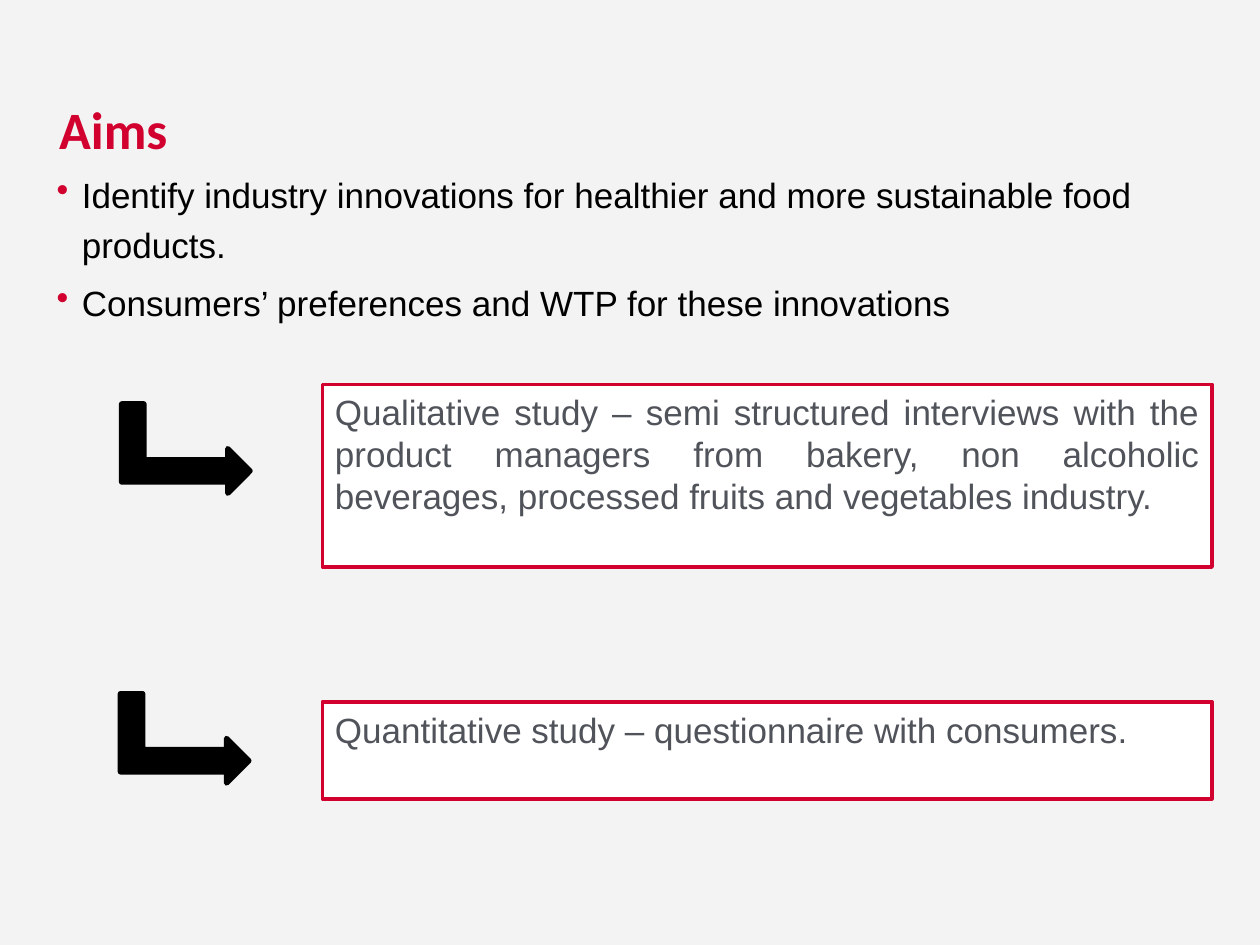
from lxml import etree
from pptx import Presentation, util as u
from pptx.dml.color import RGBColor
from pptx.enum import shapes, text
from pptx.oxml.ns import qn

HUES = {"back": "F3F3F3", "red": "D2002E", "ink": "000000",
        "grey": "50535A", "white": "FFFFFF"}
AIMS = ["Identify industry innovations for healthier and more sustainable "
        "food products.",
        "Consumers’ preferences and WTP for these innovations"]
# Arrow left and top, box top and height, wording
STUDIES = [
    (1.12, 3.05, 3.05, 1.45,
     "Qualitative study – semi structured interviews with the product "
     "managers from bakery, non alcoholic beverages, processed fruits and "
     "vegetables industry."),
    (1.11, 5.35, 5.57, 0.77,
     "Quantitative study – questionnaire with consumers."),
]


def tint(name):
    return RGBColor.from_string(HUES[name])


def add_bullet(para, hue):
    props = para._p.get_or_add_pPr()
    props.set("marL", str(u.Inches(0.2)))
    props.set("indent", str(u.Inches(-0.2)))
    color = etree.SubElement(props, qn("a:buClr"))
    etree.SubElement(color, qn("a:srgbClr")).set("val", HUES[hue])
    etree.SubElement(props, qn("a:buChar")).set("char", "•")


def write(frame, lines, size=20, font="Arial", hue="ink", bold=False,
          align=text.PP_ALIGN.LEFT, anchor=text.MSO_ANCHOR.TOP,
          pads=(0.1, 0.05), space=None, gap=0, bullet=None):
    """Fill a frame, one paragraph a line; pads are side and top insets."""
    frame.word_wrap = True
    frame.vertical_anchor = anchor
    frame.margin_left = frame.margin_right = u.Inches(pads[0])
    frame.margin_top = frame.margin_bottom = u.Inches(pads[1])
    for i, line in enumerate(lines):
        para = frame.add_paragraph() if i else frame.paragraphs[0]
        para.alignment = align
        if space:
            para.line_spacing = space
        if i and gap:
            para.space_before = u.Pt(gap)
        if bullet:
            add_bullet(para, bullet)
        run = para.add_run()
        run.text = line
        run.font.name, run.font.size = font, u.Pt(size)
        run.font.bold = bold
        run.font.color.rgb = tint(hue)


class Deck:
    def __init__(self):
        self.show = Presentation()
        self.show.slide_width = u.Inches(10)
        self.show.slide_height = u.Inches(7.5)
        self.slide = self.show.slides.add_slide(self.show.slide_layouts[6])
        fill = self.slide.background.fill
        fill.solid()
        fill.fore_color.rgb = tint("back")

    def label(self, spot, lines, **style):
        box = self.slide.shapes.add_textbox(*map(u.Inches, spot))
        write(box.text_frame, lines, **style)

    def shape(self, kind, spot, fill, line, width):
        item = self.slide.shapes.add_shape(kind, *map(u.Inches, spot))
        item.shadow.inherit = False
        item.fill.solid()
        item.fill.fore_color.rgb = tint(fill)
        item.line.color.rgb = tint(line)
        item.line.width = u.Pt(width)
        return item

    def arrow(self, left, top):
        item = self.shape(shapes.MSO_SHAPE.BENT_UP_ARROW,
                          (left, top, 0.71, 1.02), "ink", "ink", 3)
        item.rotation = 90

    def panel(self, top, height, line):
        item = self.shape(shapes.MSO_SHAPE.RECTANGLE,
                          (2.56, top, 7.06, height), "white", "red", 2)
        write(item.text_frame, [line], hue="grey",
              align=text.PP_ALIGN.JUSTIFY)


def main():
    deck = Deck()
    deck.label((0.38, 1.27, 9.24, 5.08), AIMS, pads=(0.07, 0.04),
               space=1.2, gap=4, bullet="red")
    deck.label((0.47, 0.36, 9.06, 0.91), ["Aims"], size=30, font="Calibri",
               hue="red", bold=True, anchor=text.MSO_ANCHOR.BOTTOM,
               pads=(0, 0))
    for left, top, start, height, line in STUDIES:
        deck.arrow(left, top)
        deck.panel(start, height, line)
    deck.show.save("out.pptx")


if __name__ == "__main__":
    main()
